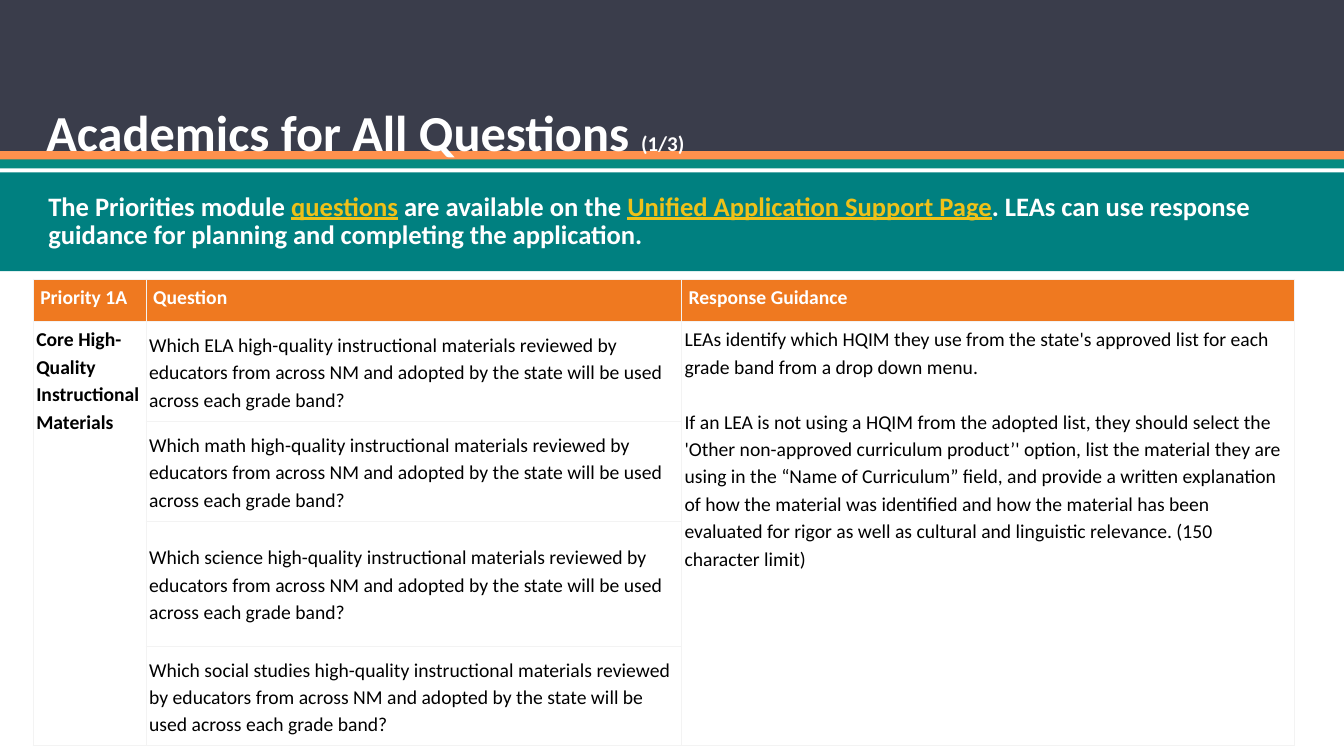
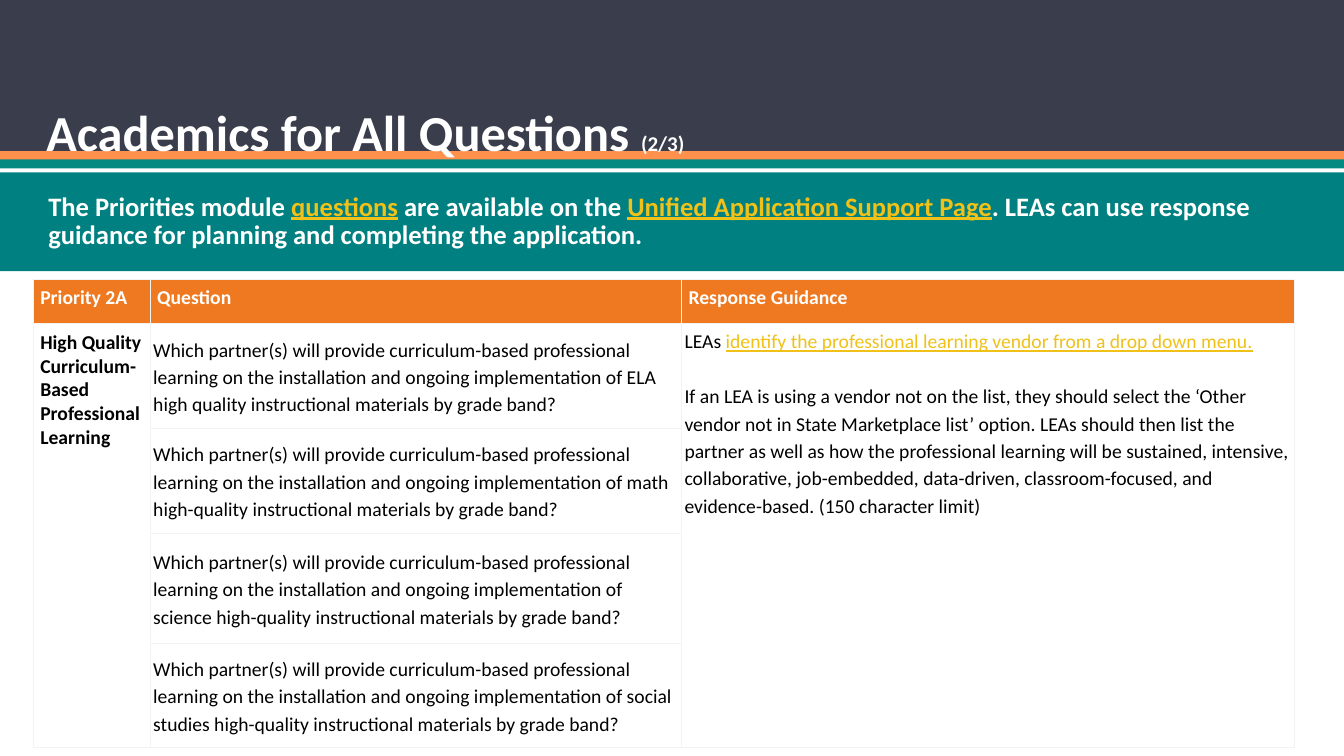
from lxml import etree
from pptx import Presentation
from pptx.dml.color import RGBColor
from pptx.enum.shapes import MSO_SHAPE
from pptx.enum.text import MSO_ANCHOR, PP_ALIGN
from pptx.oxml.ns import qn
from pptx.util import Inches, Pt

RECTANGLE = MSO_SHAPE.RECTANGLE
TOP, MIDDLE = MSO_ANCHOR.TOP, MSO_ANCHOR.MIDDLE
LEFT = PP_ALIGN.LEFT

FONT = "Calibri"
COLORS = {
    "navy": "3A3D4B", "coral": "FF914D", "sea": "048A81", "teal": "008080",
    "orange": "EF7920", "gold": "EFC119", "grid": "F3F3F3",
    "white": "FFFFFF", "black": "000000",
}
PAGE_WIDTH = 13.33
BANDS = [  # top, height, colour
    (0, 1.5, "navy"), (1.5, 0.09, "coral"), (1.58, 0.09, "sea"), (1.71, 0.98, "teal"),
]
TITLE_STYLE = {"size": 36, "bold": True, "color": "white", "spacing": 1.4, "margin": 0.13}
BANNER_STYLE = {"size": 19, "bold": True, "color": "white", "spacing": 0.9,
                "margin": 0.1, "anchor": MIDDLE}
HEADER_STYLE = {"size": 14, "bold": True, "color": "white", "margin": 0.07}
BODY_STYLE = {"size": 14, "color": "black", "spacing": 1.15, "margin": 0.03, "gap": 19.6}
QUESTION_STYLE = BODY_STYLE | {"anchor": MIDDLE}
TOPIC_STYLE = BODY_STYLE | {"bold": True, "gap": 0}

BANNER = [
    "The Priorities module ", "questions", " are available on the ",
    "Unified Application Support Page",
    ". LEAs can use response guidance for planning and completing the application.",
]
PAGES = [
    {
        "number": "(1/3)",
        "priority": "Priority 1A",
        "columns": [1.12, 5.31, 6.08],
        "rows": [0.42, 0.99, 0.99, 1.24, 0.99],
        "topic": [["Core High-Quality Instructional Materials"]],
        "topic_style": TOPIC_STYLE,
        "question": "Which {} instructional materials reviewed by educators from across NM "
                    "and adopted by the state will be used across each grade band?",
        "subjects": ["ELA high-quality", "math high-quality", "science high-quality",
                     "social studies high-quality"],
        "guidance": [
            ["LEAs identify which HQIM they use from the state's approved list for each "
             "grade band from a drop down menu."],
            ["If an LEA is not using a HQIM from the adopted list, they should select the "
             "'Other non-approved curriculum product’' option, list the material they are "
             "using in the “Name of Curriculum” field, and provide a written explanation of "
             "how the material was identified and how the material has been evaluated for "
             "rigor as well as cultural and linguistic relevance. (150 character limit)"],
        ],
    },
    {
        "number": "(2/3)",
        "priority": "Priority 2A",
        "columns": [1.16, 5.27, 6.08],
        "rows": [0.44, 1.04, 1.04, 1.09, 1.04],
        "topic": [["High Quality Curriculum-"], ["Based Professional Learning"]],
        "topic_style": TOPIC_STYLE | {"spacing": 1.0, "margin": 0.07},
        "question": "Which partner(s) will provide curriculum-based professional learning on "
                    "the installation and ongoing implementation of {} instructional "
                    "materials by grade band?",
        "subjects": ["ELA high quality", "math high-quality", "science high-quality",
                     "social studies high-quality"],
        "guidance": [
            ["LEAs ", "identify the professional learning vendor from a drop down menu."],
            ["If an LEA is using a vendor not on the list, they should select the ‘Other "
             "vendor not in State Marketplace list’ option. LEAs should then list the "
             "partner as well as how the professional learning will be sustained, "
             "intensive, collaborative, job-embedded, data-driven, classroom-focused, and "
             "evidence-based. (150 character limit)"],
        ],
    },
]


def write(holder, frame, paragraphs, style):
    """Fill a frame; every second span of a paragraph is marked as a link.

    The holder owns margins and anchor: a table cell, or the frame itself.
    """
    for side in ("left", "top", "right", "bottom"):
        setattr(holder, f"margin_{side}", Inches(style["margin"]))
    holder.vertical_anchor = style.get("anchor", TOP)
    frame.word_wrap = True
    for index, spans in enumerate(paragraphs):
        para = frame.add_paragraph() if index else frame.paragraphs[0]
        para.alignment = LEFT
        para.line_spacing = style.get("spacing", 1.0)
        para.space_before = Pt(style.get("gap", 0) if index else 0)
        for position, text in enumerate(spans):
            is_link = position % 2 == 1
            span = para.add_run()
            span.text = text
            font_format = {"name": FONT, "size": Pt(style["size"]),
                           "bold": style.get("bold", False), "underline": is_link}
            for name, value in font_format.items():
                setattr(span.font, name, value)
            color = "gold" if is_link else style["color"]
            span.font.color.rgb = RGBColor.from_string(COLORS[color])


def paint_cell(cell, fill, line_width):
    properties = cell._tc.get_or_add_tcPr()
    for edge in ("a:lnL", "a:lnR", "a:lnT", "a:lnB"):
        line = etree.SubElement(properties, qn(edge), w=str(Pt(line_width)))
        line_fill = etree.SubElement(line, qn("a:solidFill"))
        etree.SubElement(line_fill, qn("a:srgbClr"), val=COLORS["grid"])
    cell.fill.solid()
    cell.fill.fore_color.rgb = RGBColor.from_string(COLORS[fill])


deck = Presentation()
deck.slide_width, deck.slide_height = Inches(PAGE_WIDTH), Inches(7.5)

for content in PAGES:
    page = deck.slides.add_slide(deck.slide_layouts[6])

    for top, height, color in BANDS:
        band = page.shapes.add_shape(
            RECTANGLE, 0, Inches(top), Inches(PAGE_WIDTH), Inches(height))
        band.shadow.inherit = False
        band.fill.solid()
        band.fill.fore_color.rgb = RGBColor.from_string(COLORS[color])
        band.line.fill.background()
    banner = band.text_frame
    write(banner, banner, [BANNER], BANNER_STYLE)
    banner.margin_left = Inches(0.48)

    title = page.shapes.add_textbox(
        Inches(0.33), Inches(0.63), Inches(12.42), Inches(0.83)).text_frame
    write(title, title, [["Academics for All Questions "]], TITLE_STYLE)
    number = title.paragraphs[0].add_run()
    number.text = content["number"]
    number_format = {"name": FONT, "size": Pt(15), "bold": True}
    for name, value in number_format.items():
        setattr(number.font, name, value)
    number.font.color.rgb = RGBColor.from_string(COLORS["white"])

    columns, rows = content["columns"], content["rows"]
    table = page.shapes.add_table(
        len(rows), len(columns), Inches(0.33), Inches(2.77),
        Inches(sum(columns)), Inches(sum(rows))).table
    table.first_row = table.horz_banding = False
    for column, width in zip(table.columns, columns):
        column.width = Inches(width)
    for index, (row, height) in enumerate(zip(table.rows, rows)):
        row.height = Inches(height)
        for cell in row.cells:
            if index == 0:
                paint_cell(cell, "orange", 1)
            else:
                paint_cell(cell, "white", 0.75)

    for index, heading in enumerate([content["priority"], "Question", "Response Guidance"]):
        cell = table.cell(0, index)
        write(cell, cell.text_frame, [[heading]], HEADER_STYLE)
    for index, subject in enumerate(content["subjects"], start=1):
        cell = table.cell(index, 1)
        write(cell, cell.text_frame, [[content["question"].format(subject)]], QUESTION_STYLE)
    for index, paragraphs, style in ((0, content["topic"], content["topic_style"]),
                                     (2, content["guidance"], BODY_STYLE)):
        cell = table.cell(1, index)
        cell.merge(table.cell(len(rows) - 1, index))
        write(cell, cell.text_frame, paragraphs, style)

deck.save("out.pptx")
